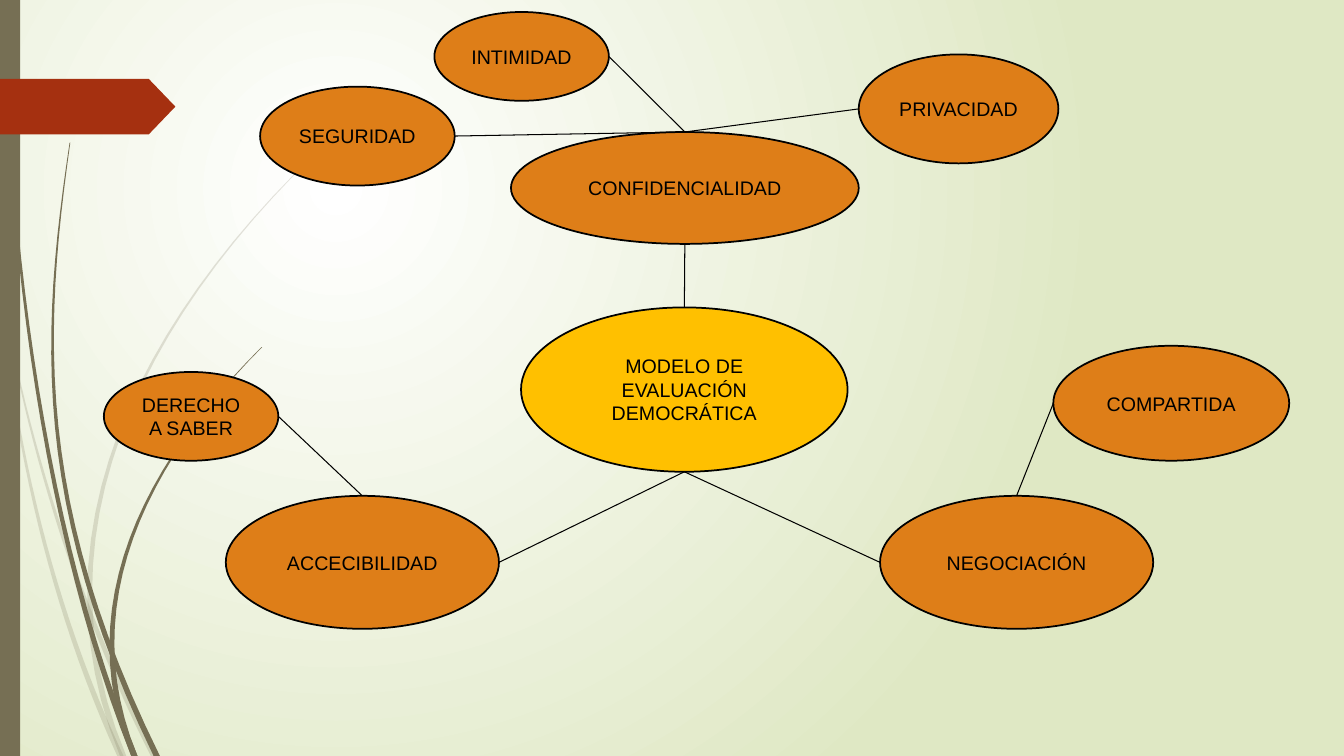
"""Build a concept map of the democratic evaluation model."""
from collections import namedtuple
from math import comb

from lxml.etree import SubElement
from pptx import Presentation
from pptx.dml.color import RGBColor as Color
from pptx.enum.shapes import MSO_CONNECTOR as Connector, MSO_SHAPE as Preset
from pptx.enum.text import MSO_ANCHOR as Anchor, PP_ALIGN as Align
from pptx.oxml.ns import qn
from pptx.util import Pt

COLORS = {"white": "FFFFFF", "meadow": "DFE8C4", "stem": "766F54", "tag": "A53010",
          "core": "FFC000", "topic": "DE7E18", "ink": "000000"}
PAGE_WIDTH, PAGE_HEIGHT = 960, 540
TOP, LEFT, BOTTOM, RIGHT = range(4)


def paint(shape, color):
    """Give a shape a flat fill without line or shadow."""
    shape.shadow.inherit = False
    shape.fill.solid()
    shape.fill.fore_color.rgb = Color.from_string(COLORS[color])
    shape.line.fill.background()


def curve_point(controls, t):
    """Return the point of a cubic Bézier curve at t, from 0 to 1."""
    weights = [comb(3, k) * t**k * (1 - t)**(3 - k) for k in range(4)]
    return [sum(w * value for w, value in zip(weights, axis)) for axis in zip(*controls)]


deck = Presentation()
deck.slide_width, deck.slide_height = Pt(PAGE_WIDTH), Pt(PAGE_HEIGHT)
page = deck.slides.add_slide(deck.slide_layouts[6])

# Background: a round glow centred a quarter of the way in
backdrop = page.background.fill
backdrop.gradient()
for stop, name in zip(backdrop.gradient_stops, ("white", "meadow")):
    stop.color.rgb = Color.from_string(COLORS[name])
gradient = page.element.xpath(".//p:bg//a:gradFill")[0]
gradient.remove(gradient.find(qn("a:lin")))
glow = SubElement(gradient, qn("a:path"), {"path": "circle"})
SubElement(glow, qn("a:fillToRect"), {"l": "50000", "t": "50000", "r": "100000", "b": "100000"})

# Stems: each follows a curve from its thin tip to its thick root
Stem = namedtuple("Stem", "tip upper_pull lower_pull root")
pale_stems = [
    Stem((0, 209), (11, 317), (36, 432), (86, PAGE_HEIGHT)),
    Stem((4, 223), (22, 324), (58, 439), (110, PAGE_HEIGHT)),
    Stem((225, 110), (101, 230), (22, 382), (88, PAGE_HEIGHT)),
]
dark_stems = [
    Stem((3, 0), (6, 180), (32, 382), (96, PAGE_HEIGHT)),
    Stem((50, 102), (30, 238), (24, 360), (112, PAGE_HEIGHT)),
    Stem((187, 248), (104, 331), (52, 432), (96, PAGE_HEIGHT)),
]
STEPS, TIP_WIDTH, ROOT_WIDTH = 24, 0.5, 4.5
for stems, opacity in ((pale_stems, 20), (dark_stems, 100)):
    cluster = page.shapes.add_group_shape()
    for stem in stems:
        left_edge, right_edge = [], []
        for step in range(STEPS + 1):
            t = step / STEPS
            x, y = curve_point(stem, t)
            half = (TIP_WIDTH + (ROOT_WIDTH - TIP_WIDTH) * t) / 2
            left_edge.append((Pt(max(x - half, 0)), Pt(y)))
            right_edge.append((Pt(x + half), Pt(y)))
        outline = left_edge + right_edge[::-1]
        builder = cluster.shapes.build_freeform(*outline[0])
        builder.add_line_segments(outline[1:], close=True)
        blade = builder.convert_to_shape()
        paint(blade, "stem")
        if opacity < 100:
            tint = blade.element.spPr.find(qn("a:solidFill"))[0]
            SubElement(tint, qn("a:alpha"), {"val": str(opacity * 1000)})

side_bar = page.shapes.add_shape(Preset.RECTANGLE, 0, 0, Pt(14.4), Pt(PAGE_HEIGHT))
paint(side_bar, "stem")
tag = page.shapes.add_shape(Preset.PENTAGON, 0, Pt(56.3), Pt(125.3), Pt(39.8))
tag.adjustments[0] = 0.48
paint(tag, "tag")

# Ideas: each names its parent and the two sides that their link joins
SIZES = {"core": (233.3, 117.4), "wide": (248.4, 79.9), "branch": (195.1, 95),
         "small": (124.6, 63.4), "medium": (139, 70.6), "large": (142.6, 77.8),
         "shared": (168.5, 82.1)}
Idea = namedtuple("Idea", "label left top size parent parent_side own_side",
                  defaults=(None, None, None))
CORE = "MODELO DE EVALUACIÓN DEMOCRÁTICA"
BRANCH_TOP = 354.2
ideas = [
    Idea(CORE, 372.2, 219.6, "core"),
    Idea("NEGOCIACIÓN", 628.6, BRANCH_TOP, "branch", CORE, BOTTOM, LEFT),
    Idea("CONFIDENCIALIDAD", 365, 94.3, "wide", CORE, TOP, BOTTOM),
    Idea("ACCECIBILIDAD", 161.3, BRANCH_TOP, "branch", CORE, BOTTOM, RIGHT),
    Idea("INTIMIDAD", 310.3, 8.6, "small", "CONFIDENCIALIDAD", TOP, RIGHT),
    Idea("SEGURIDAD", 185.8, 61.9, "medium", "CONFIDENCIALIDAD", TOP, RIGHT),
    Idea("PRIVACIDAD", 613.4, 38.9, "large", "CONFIDENCIALIDAD", TOP, LEFT),
    Idea("COMPARTIDA", 752.4, 247, "shared", "NEGOCIACIÓN", TOP, LEFT),
    Idea("DERECHO A SABER", 74.2, 265.7, "small", "ACCECIBILIDAD", TOP, RIGHT),
]
text_format = {"name": "Arial", "size": Pt(14)}
box_format = {"word_wrap": True, "vertical_anchor": Anchor.MIDDLE}
ovals = {}
for idea in ideas:
    frame = (idea.left, idea.top, *SIZES[idea.size])
    oval = page.shapes.add_shape(Preset.OVAL, *map(Pt, frame))
    paint(oval, "core" if idea.label == CORE else "topic")
    oval.line.color.rgb = Color.from_string(COLORS["ink"])
    oval.line.width = Pt(1.25)
    box = oval.text_frame
    para = box.paragraphs[0]
    para.alignment = Align.CENTER
    span = para.add_run()
    span.text = idea.label
    span.font.color.rgb = Color.from_string(COLORS["ink"])
    for part, settings in ((box, box_format), (span.font, text_format)):
        for attribute, value in settings.items():
            setattr(part, attribute, value)
    ovals[idea.label] = oval

# Links: an oval has eight joints, so each side's number is doubled
for idea in ideas:
    if idea.parent is None:
        continue
    link = page.shapes.add_connector(Connector.STRAIGHT, 0, 0, 0, 0)
    link.begin_connect(ovals[idea.parent], idea.parent_side)
    link.end_connect(ovals[idea.label], idea.own_side)
    for joint in link.element.xpath(".//a:stCxn | .//a:endCxn"):
        joint.set("idx", str(2 * int(joint.get("idx"))))
    link.line.color.rgb = Color.from_string(COLORS["ink"])
    link.line.width = Pt(0.75)
    SubElement(link.element.spPr, qn("a:effectLst"))

deck.save("out.pptx")
